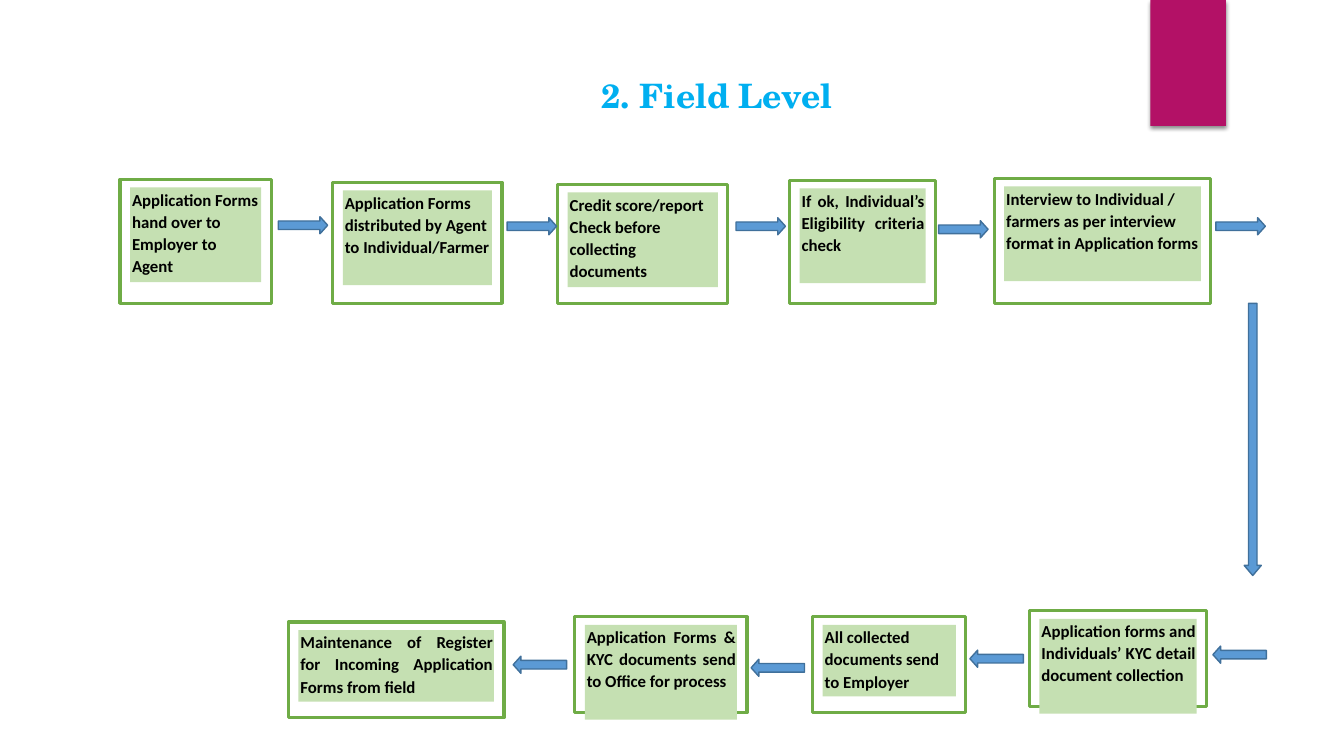
from dataclasses import dataclass

from lxml import etree
from pptx import Presentation
from pptx.dml.color import RGBColor as RGB
from pptx.enum.shapes import MSO_SHAPE as SHAPE
from pptx.enum.text import MSO_ANCHOR as ANCHOR, MSO_AUTO_SIZE as AUTOSIZE, PP_ALIGN as ALIGN
from pptx.oxml.ns import qn
from pptx.util import Pt

PX = 9144


@dataclass(frozen=True)
class Theme:
    ribbon: RGB = RGB(0xB3, 0x11, 0x66)
    title: RGB = RGB(0x00, 0xAF, 0xF0)
    frame: RGB = RGB(0x6F, 0xAC, 0x46)
    panel: RGB = RGB(0xC5, 0xE0, 0xB2)
    text: RGB = RGB(0, 0, 0)
    arrow: RGB = RGB(0x5B, 0x9A, 0xD5)
    arrow_edge: RGB = RGB(0x40, 0x70, 0x9B)
    title_font: str = "TeX Gyre Schola"
    body_font: str = "Calibri"
    title_size: int = 24
    body_size: int = 12
    frame_width: float = 2.25
    arrow_width: int = 1


THEME = Theme()
PAD_X, PAD_Y, INDENT = 10, 8, 2
TALL, SHORT = 94, 71
ARROW_THICK = 17

FORWARD_STEPS = [
    ((119, 178, 150, 123), TALL, ALIGN.LEFT, "Application Forms hand over to Employer to Agent"),
    ((330, 181, 168, 120), TALL, ALIGN.LEFT, "Application Forms distributed by Agent to Individual/Farmer"),
    ((553, 183, 169, 118), TALL, ALIGN.LEFT, "Credit score/report Check before collecting documents"),
    ((783, 179, 145, 122), TALL, ALIGN.JUSTIFY, "If ok, Individual’s Eligibility criteria check"),
    ((986, 177, 215, 124), TALL, ALIGN.LEFT,
     "Interview to Individual / farmers as per interview format in Application forms"),
]
RETURN_STEPS = [
    ((1021, 606, 176, 95), TALL, ALIGN.JUSTIFY,
     "Application forms and Individuals’ KYC detail document collection"),
    ((806, 612, 152, 95), SHORT, ALIGN.LEFT, "All collected documents send to Employer"),
    ((570, 612, 171, 95), TALL, ALIGN.JUSTIFY,
     "Application Forms & KYC documents send to Office for process"),
    ((286, 617, 214, 95), SHORT, ALIGN.JUSTIFY,
     "Maintenance of Register for Incoming Application Forms from field"),
]
FORWARD_ARROWS = [(276, 215), (503, 216), (730, 216), (931, 219), (1206, 216)]
RETURN_ARROWS = [(1203, 641), (962, 645), (745, 654), (509, 651)]


def add_box(slide, kind, box, fill=None, line=None, width=0):
    sp = slide.shapes.add_shape(kind, *(v * PX for v in box))
    sp.shadow.inherit = False
    if fill is None:
        sp.fill.background()
    else:
        sp.fill.solid()
        sp.fill.fore_color.rgb = fill
    if line is None:
        sp.line.fill.background()
    else:
        sp.line.color.rgb = line
        sp.line.width = Pt(width)
    return sp


def add_text(sp, text, font, size, color, align, indent, spacing):
    tf = sp.text_frame
    tf.margin_left = tf.margin_top = tf.margin_bottom = 0
    tf.margin_right = PX
    tf.word_wrap = True
    tf.auto_size = AUTOSIZE.NONE
    tf.vertical_anchor = ANCHOR.TOP
    p = tf.paragraphs[0]
    p.alignment = align
    p.line_spacing = spacing
    p._p.get_or_add_pPr().set("marL", str(indent * PX))
    r = p.add_run()
    r.text = text
    r.font.name = font
    r.font.size = Pt(size)
    r.font.bold = True
    r.font.color.rgb = color
    return r


def draw_ribbon(slide, box):
    sp = add_box(slide, SHAPE.RECTANGLE, box, THEME.ribbon)
    effects = sp._element.spPr.find(qn("a:effectLst"))
    shadow = etree.SubElement(effects, qn("a:outerShdw"), blurRad="38100", dist="25400", dir="5400000")
    color = etree.SubElement(shadow, qn("a:srgbClr"), val="000000")
    etree.SubElement(color, qn("a:alpha"), val="45000")


def draw_title(slide, box):
    sp = slide.shapes.title
    sp.left, sp.top, sp.width, sp.height = (v * PX for v in box)
    r = add_text(sp, "2. Field Level", THEME.title_font, THEME.title_size,
                 THEME.title, ALIGN.LEFT, 1, 1.0)
    r.font._element.set("spc", "-10")


def draw_step(slide, box, panel_height, align, text):
    x, y, w, h = box
    add_box(slide, SHAPE.RECTANGLE, box, line=THEME.frame, width=THEME.frame_width)
    panel = add_box(slide, SHAPE.RECTANGLE,
                    (x + PAD_X, y + PAD_Y, w - 2 * PAD_X, panel_height), THEME.panel)
    add_text(panel, text, THEME.body_font, THEME.body_size, THEME.text, align, INDENT, 1.1)


def draw_arrow(slide, kind, box):
    sp = add_box(slide, kind, box, THEME.arrow, THEME.arrow_edge, THEME.arrow_width)
    sp.adjustments[0] = 0.5
    sp.adjustments[1] = 0.59 if kind == SHAPE.DOWN_ARROW else 0.45


def draw_flow(slide, steps, arrows, kind, arrow_length):
    for step in steps:
        draw_step(slide, *step)
    for x, y in arrows:
        draw_arrow(slide, kind, (x, y, arrow_length, ARROW_THICK))


def main():
    prs = Presentation()
    prs.slide_width, prs.slide_height = 1333 * PX, 750 * PX
    slide = prs.slides.add_slide(prs.slide_layouts[5])
    draw_ribbon(slide, (1141, 0, 75, 125))
    draw_title(slide, (596, 74, 279, 40))
    draw_flow(slide, FORWARD_STEPS, FORWARD_ARROWS, SHAPE.RIGHT_ARROW, 49)
    draw_arrow(slide, SHAPE.DOWN_ARROW, (1234, 301, ARROW_THICK, 270))
    draw_flow(slide, RETURN_STEPS, RETURN_ARROWS, SHAPE.LEFT_ARROW, 53)
    prs.save("out.pptx")


if __name__ == "__main__":
    main()
